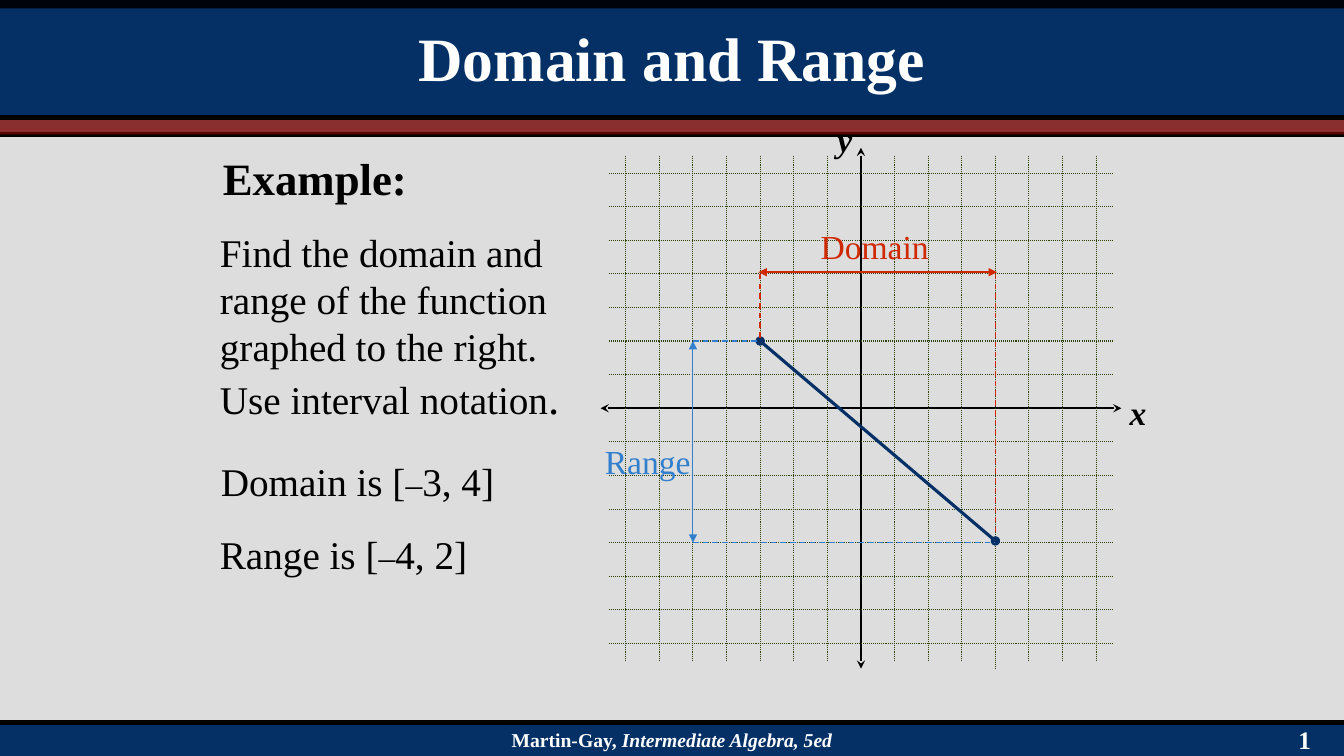
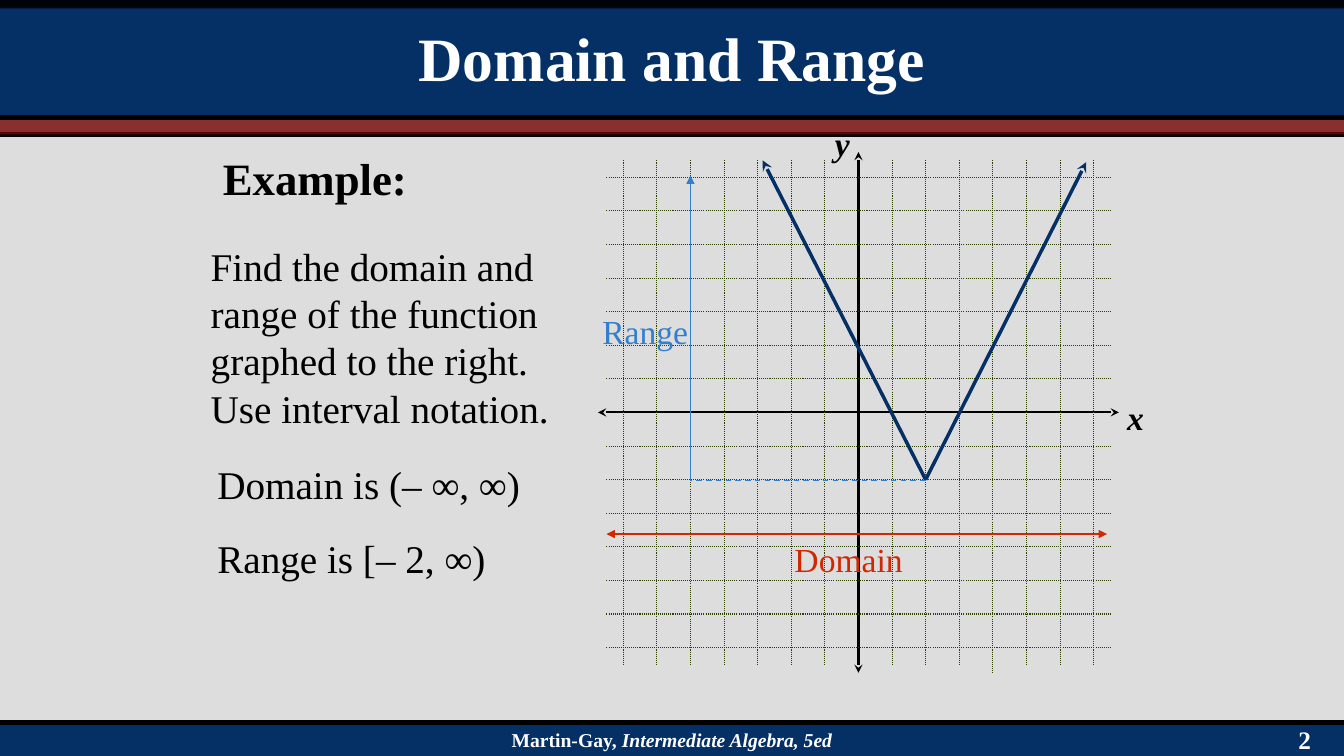
from dataclasses import dataclass, field
from typing import NamedTuple

from lxml import etree
from pptx import Presentation, util as u
from pptx.dml.color import RGBColor
from pptx.enum import dml, shapes, text
from pptx.oxml.ns import qn

COLS, ROWS = 160, 90
CELL = u.Inches(1) / 12
UNIT = 4
SPAN = 7.5
AXIS = 7.75
FONT = "Times New Roman"
BLACK, WHITE, GREY = "000000", "FFFFFF", "DDDDDD"
NAVY, MAROON, OLIVE = "043066", "740404", "2D4202"
RED, BLUE = "D02800", "317FCD"
DOT, DASH = dml.MSO_LINE.ROUND_DOT, dml.MSO_LINE.DASH


class Box(NamedTuple):
    col: float
    row: float
    cols: float
    rows: float


class Point(NamedTuple):
    x: float
    y: float


class Piece(NamedTuple):
    text: str
    size: float = 28
    color: str = BLACK
    bold: bool = False
    italic: bool = False


@dataclass
class Stroke:
    start: Point
    end: Point
    color: str
    width: float = 1
    dash: dml.MSO_LINE | None = None
    head: str = ""
    tail: str = ""


@dataclass
class Label:
    at: Point
    pieces: list[Piece]
    cols: float
    rows: float = 6


@dataclass
class Example:
    origin: Point
    strokes: list[Stroke]
    labels: list[Label]
    texts: list[tuple[Box, list[Piece]]] = field(default_factory=list)


def rgb(value: str) -> RGBColor:
    return RGBColor.from_string(value)


def cells(*values: float) -> list[int]:
    return [round(v * CELL) for v in values]


def write(tf, pieces: list[Piece], align=text.PP_ALIGN.LEFT, anchor=text.MSO_ANCHOR.TOP) -> None:
    tf.word_wrap = True
    tf.vertical_anchor = anchor
    p = tf.paragraphs[0]
    p.alignment = align
    for piece in pieces:
        r = p.add_run()
        r.text = piece.text
        r.font.name = FONT
        r.font.size = u.Pt(piece.size)
        r.font.bold = piece.bold
        r.font.italic = piece.italic
        r.font.color.rgb = rgb(piece.color)


def add_text(s, box: Box, pieces: list[Piece], align=text.PP_ALIGN.LEFT):
    sp = s.shapes.add_textbox(*cells(*box))
    write(sp.text_frame, pieces, align)
    return sp


def add_band(s, box: Box, color: str, opacity: int = 100):
    sp = s.shapes.add_shape(shapes.MSO_SHAPE.RECTANGLE, *cells(*box))
    sp.shadow.inherit = False
    sp.line.fill.background()
    sp.fill.solid()
    sp.fill.fore_color.rgb = rgb(color)
    if opacity < 100:
        paint = next(sp.element.iter(qn("a:srgbClr")))
        etree.SubElement(paint, qn("a:alpha"), val=str(opacity * 1000))
    return sp


def add_line(s, stroke: Stroke) -> None:
    sp = s.shapes.add_connector(shapes.MSO_CONNECTOR.STRAIGHT, *cells(*stroke.start, *stroke.end))
    sp.line.color.rgb = rgb(stroke.color)
    sp.line.width = u.Pt(stroke.width)
    if stroke.dash:
        sp.line.dash_style = stroke.dash
    ln = next(sp.element.iter(qn("a:ln")))
    for tag, kind in (("a:headEnd", stroke.head), ("a:tailEnd", stroke.tail)):
        if kind:
            etree.SubElement(ln, qn(tag), type=kind)
    etree.SubElement(sp.element.spPr, qn("a:effectLst"))


def add_rule(s, row: float) -> None:
    add_line(s, Stroke(Point(0, row), Point(COLS, row), BLACK, 4))


def add_page_number(s) -> None:
    sp = add_text(s, Box(153.4, 85.6, 6, 4.8), [Piece("‹#›", 18, WHITE, True)])
    run = next(sp.element.iter(qn("a:r")))
    fld = etree.Element(
        qn("a:fld"), id="{B6F15528-21DE-4FAA-801E-634DDDAF4B2B}", type="slidenum")
    fld.extend(list(run))
    run.getparent().replace(run, fld)


def build_frame(s, layout) -> None:
    for ph in list(layout.placeholders)[1:]:
        ph.element.getparent().remove(ph.element)
    own = len(s.shapes)
    add_rule(s, 16)
    add_band(s, Box(0, 14, COLS, 2), MAROON, 80)
    add_band(s, Box(0, 0, COLS, 14), NAVY)
    add_band(s, Box(0, 0, COLS, 1), BLACK, 90)
    add_rule(s, 14)
    footer = add_band(s, Box(0, 86, COLS, 4), NAVY)
    write(footer.text_frame,
          [Piece("Martin-Gay, ", 14, WHITE, True),
           Piece("Intermediate Algebra, 5ed", 14, WHITE, True, True)],
          text.PP_ALIGN.CENTER, text.MSO_ANCHOR.MIDDLE)
    add_page_number(s)
    add_rule(s, 86)
    for sp in list(s.shapes)[own:]:
        layout.shapes.element.append(sp.element)


def grid_strokes() -> list[Stroke]:
    axes = [Stroke(Point(0, AXIS), Point(0, -AXIS), BLACK, 1.5, None, "stealth", "stealth"),
            Stroke(Point(-AXIS, 0), Point(AXIS, 0), BLACK, 1.5, None, "stealth", "stealth")]
    steps = [k for k in range(-7, 8) if k]
    across = [Stroke(Point(-SPAN, k), Point(SPAN, k), OLIVE, 0.75, DOT) for k in steps]
    down = [Stroke(Point(k, SPAN), Point(k, -AXIS if k == 4 else -SPAN), OLIVE, 0.75, DOT)
            for k in steps]
    return axes + across + down


def add_graph(s, example: Example) -> None:
    def place(pt: Point) -> Point:
        return Point(example.origin.x + UNIT * pt.x, example.origin.y - UNIT * pt.y)

    for k in grid_strokes() + example.strokes:
        add_line(s, Stroke(place(k.start), place(k.end), k.color, k.width, k.dash, k.head, k.tail))
    names = [Label(Point(7.7, 0.62), [Piece("x", 24, BLACK, True, True)], 4.4),
             Label(Point(-1, 8.75), [Piece("y", 24, BLACK, True, True)], 4.2)]
    for label in names + example.labels:
        add_text(s, Box(*place(label.at), label.cols, label.rows), label.pieces)


def add_title(s) -> None:
    sp = s.shapes.title
    sp.left, sp.top, sp.width, sp.height = cells(26, 2.8, 108, 8)
    write(sp.text_frame, [Piece("Domain and Range", 44, WHITE, True)],
          text.PP_ALIGN.CENTER, text.MSO_ANCHOR.MIDDLE)


def fill_slide(s, example: Example) -> None:
    add_title(s)
    add_graph(s, example)
    add_text(s, Box(25, 17.3, 25, 7.6), [Piece("Example:", 32, BLACK, True)],
             text.PP_ALIGN.CENTER)
    for box, pieces in example.texts:
        add_text(s, box, pieces)


TASK = "Find the domain and range of the function graphed to the right. Use interval notation"
DOMAIN = [Piece("Domain", 24, RED)]
RANGE = [Piece("Range", 24, BLUE)]

SEGMENT = Example(
    Point(102.5, 48.6),
    [Stroke(Point(-3, 2), Point(4, -3.95), NAVY, 2.25, None, "oval", "oval"),
     Stroke(Point(4, 4), Point(4, -3.75), RED, 1, DASH),
     Stroke(Point(-3, 4), Point(-3, 2), RED, 1, DASH),
     Stroke(Point(-3.05, 4.05), Point(4.05, 4.05), RED, 1, None, "triangle", "triangle"),
     Stroke(Point(-5, -4), Point(4, -4), BLUE, 1, DASH),
     Stroke(Point(-5, 2), Point(-3, 2), BLUE, 1, DASH),
     Stroke(Point(-5, 2), Point(-5, -4), BLUE, 0.75, None, "triangle", "triangle")],
    [Label(Point(-1.5, 5.58), DOMAIN, 16), Label(Point(-7.92, -0.84), RANGE, 14)],
    [(Box(25, 26.6, 46, 24.4), [Piece(TASK), Piece(".", 32)]),
     (Box(25.1, 53.8, 44, 6.8), [Piece("Domain is ["), Piece("–", 24), Piece("3, 4]")]),
     (Box(25, 62.5, 41.5, 6.8), [Piece("Range is ["), Piece("–", 24), Piece("4, 2]")])])

VEE = Example(
    Point(102.2, 49.1),
    [Stroke(Point(2, -2), Point(6.78, 7.45), NAVY, 2.5, None, "", "stealth"),
     Stroke(Point(2, -2), Point(-2.85, 7.5), NAVY, 2.5, None, "", "stealth"),
     Stroke(Point(-7.5, -3.62), Point(7.4, -3.62), RED, 1, None, "triangle", "triangle"),
     Stroke(Point(2, -2.03), Point(-5, -2.03), BLUE, 1, DASH),
     Stroke(Point(-5, -2.03), Point(-5, 7.05), BLUE, 1, None, "", "triangle")],
    [Label(Point(-2.2, -3.62), DOMAIN, 16), Label(Point(-7.92, 3.18), RANGE, 13.4)],
    [(Box(23.9, 28.3, 44.5, 23.6), [Piece(TASK + ".")]),
     (Box(24.7, 54.2, 41.5, 6.8), [Piece("Domain is (– ∞, ∞)")]),
     (Box(24.7, 63, 41.5, 6.8), [Piece("Range is [– 2, ∞)")])])


def main() -> None:
    prs = Presentation()
    prs.slide_width, prs.slide_height = cells(COLS, ROWS)
    fill = prs.slide_master.background.fill
    fill.solid()
    fill.fore_color.rgb = rgb(GREY)
    layout = prs.slide_layouts[5]
    slides = [prs.slides.add_slide(layout) for _ in range(2)]
    build_frame(slides[0], layout)
    for s, example in zip(slides, (SEGMENT, VEE)):
        fill_slide(s, example)
    prs.save("out.pptx")


if __name__ == "__main__":
    main()
